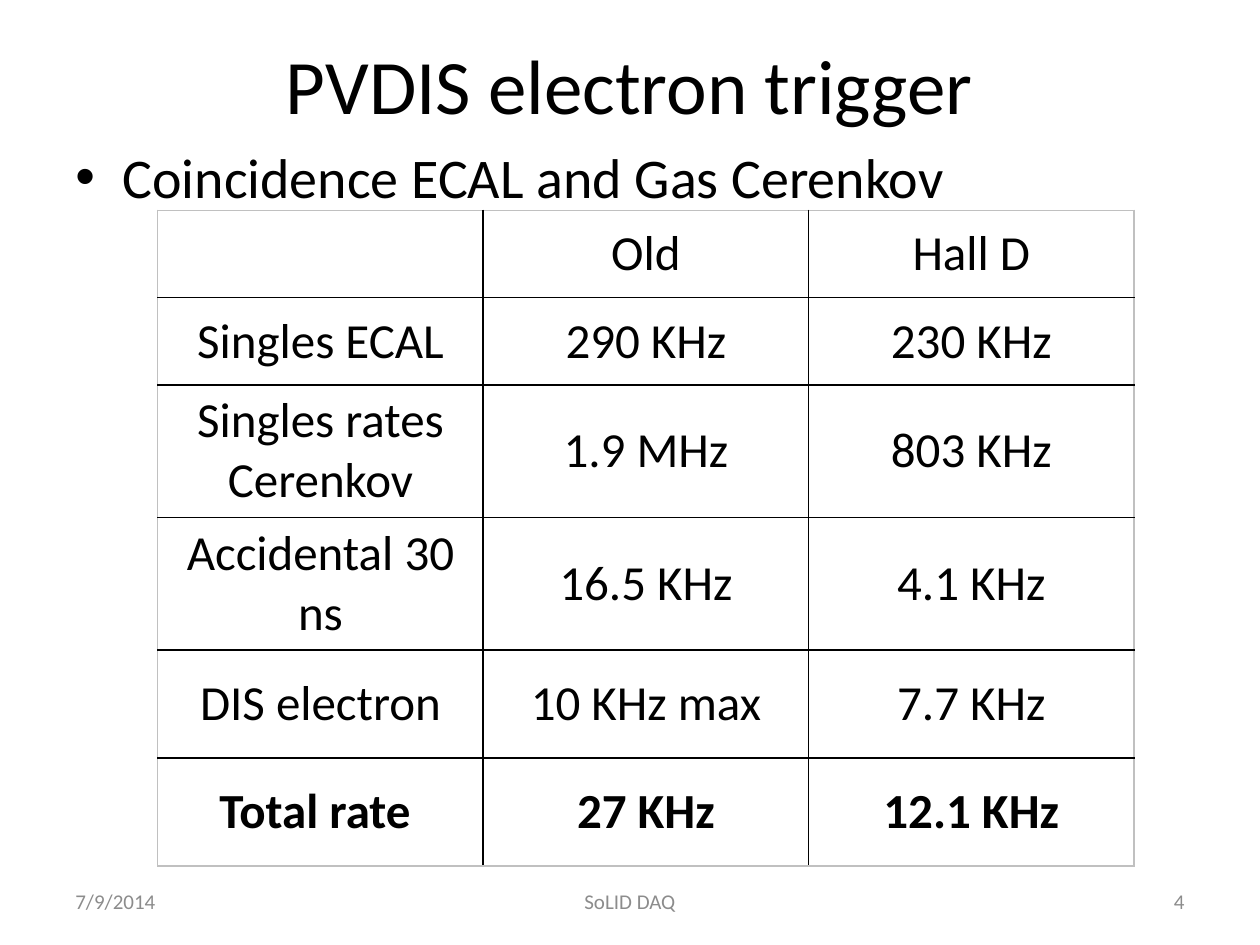
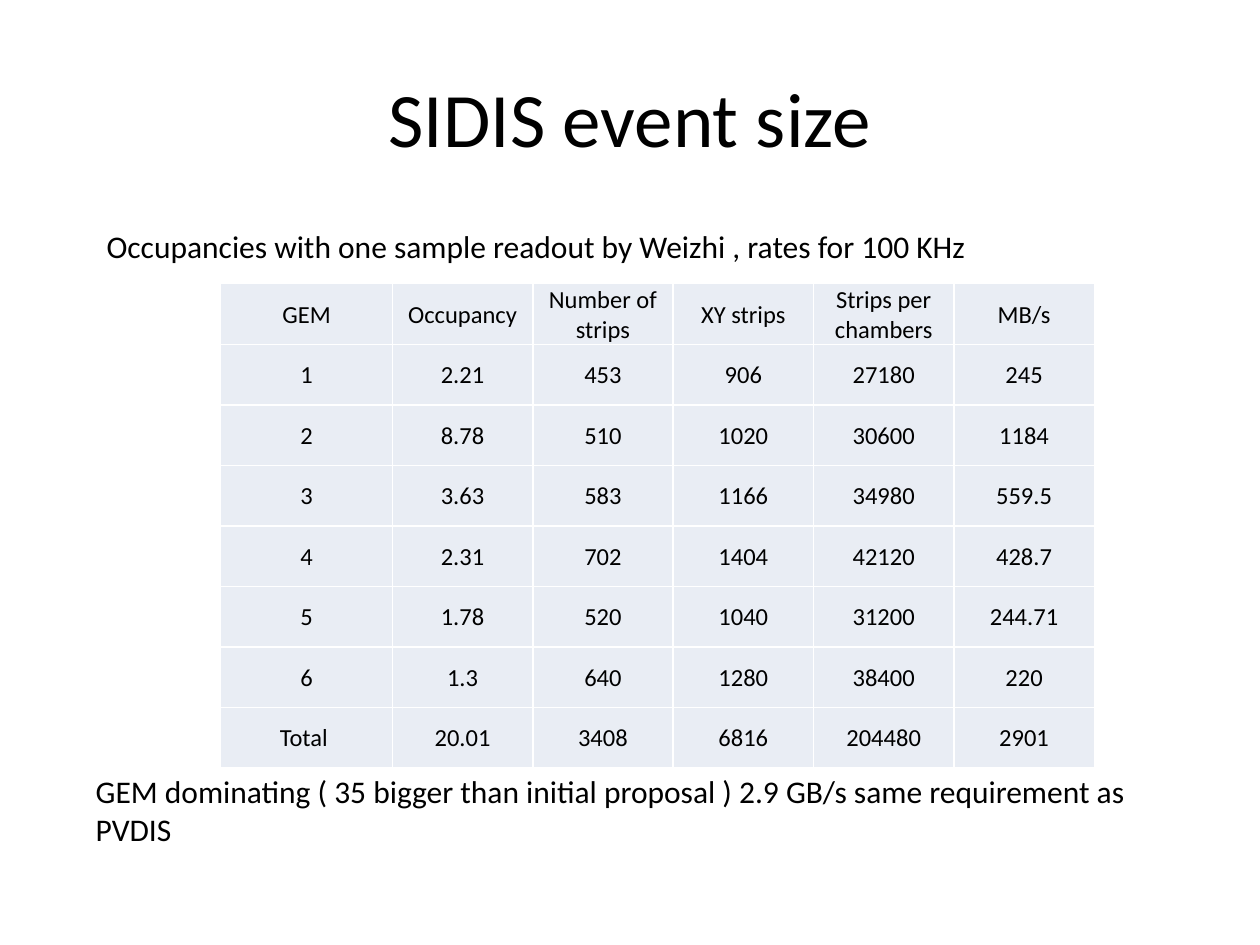
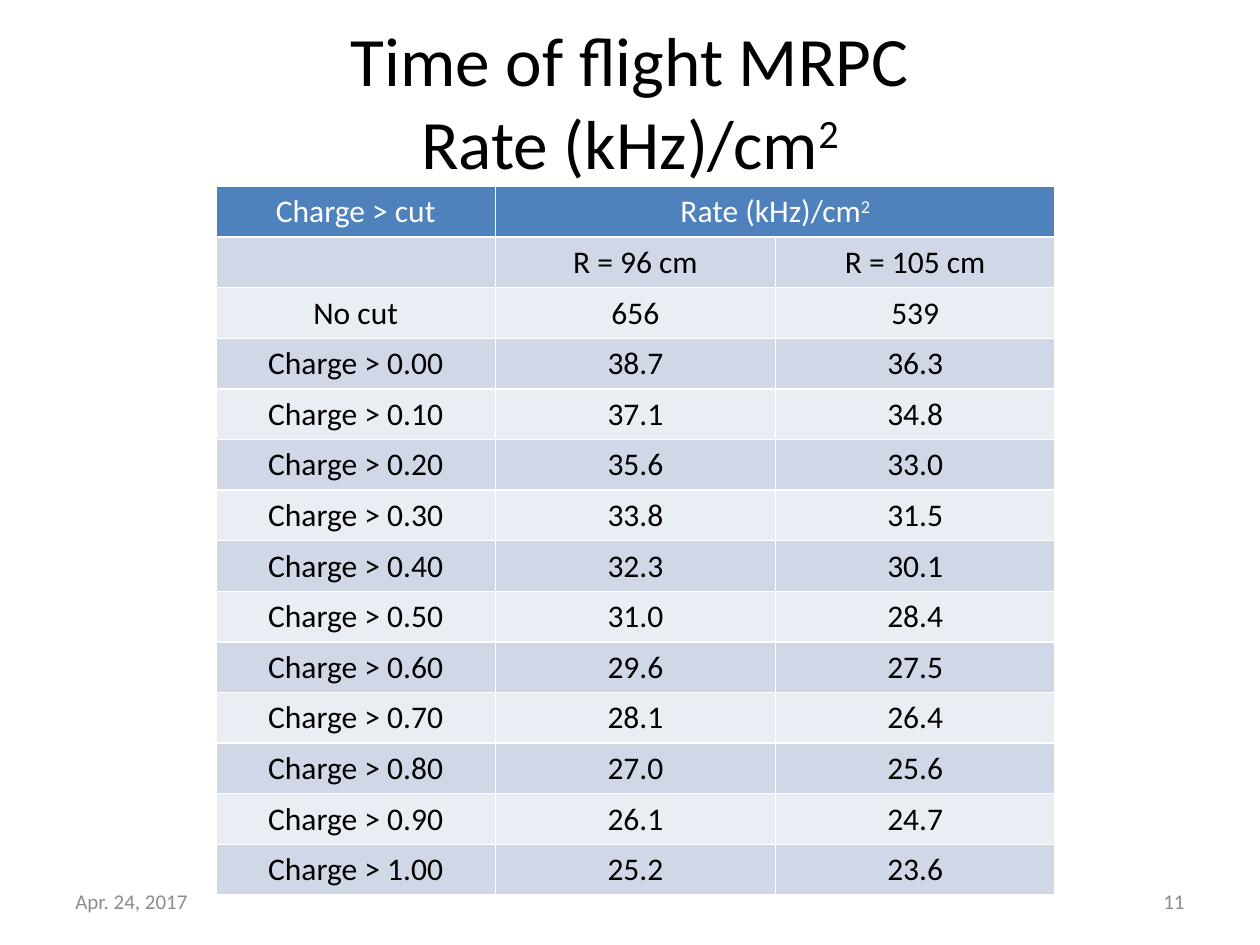
"""Build three slides of trigger rates, event sizes and time-of-flight rates."""
from lxml.etree import SubElement
from pptx import Presentation
from pptx.dml.color import RGBColor
from pptx.enum.text import MSO_ANCHOR as Anchor, MSO_AUTO_SIZE as AutoSize, PP_ALIGN as Align
from pptx.oxml import parse_xml
from pptx.oxml.ns import nsdecls, qn
from pptx.util import Cm, Pt

FONT = "Calibri"
COLORS = {"ink": "000000", "paper": "FFFFFF", "footer": "8C8C8C", "frame": "C0C0C0",
          "header": "4F81BD", "dark_band": "D0D8E8", "light_band": "E9EDF4"}
TITLE_BOX = {"left": 1.27, "width": 22.86, "height": 3.18}
FOOTER_TOP, FOOTER_HEIGHT = 17.65, 1.02
FOOTER_SLOTS = {"date": (1.27, 5.93, Align.LEFT), "name": (8.68, 8.04, Align.CENTER),
                "number": (18.2, 5.93, Align.RIGHT)}

TRIGGER_RATES = [
    ("", "Old", "Hall D"),
    ("Singles ECAL", "290 KHz", "230 KHz"),
    ("Singles rates Cerenkov", "1.9 MHz", "803 KHz"),
    ("Accidental 30 ns", "16.5 KHz", "4.1 KHz"),
    ("DIS electron", "10 KHz max", "7.7 KHz"),
    ("Total rate ", "27 KHz", "12.1 KHz"),
]
GEM_RATES = [
    ("GEM", "Occupancy", "Number of strips", "XY strips", "Strips per chambers", "MB/s"),
    ("1", "2.21", "453", "906", "27180", "245"),
    ("2", "8.78", "510", "1020", "30600", "1184"),
    ("3", "3.63", "583", "1166", "34980", "559.5"),
    ("4", "2.31", "702", "1404", "42120", "428.7"),
    ("5", "1.78", "520", "1040", "31200", "244.71"),
    ("6", "1.3", "640", "1280", "38400", "220"),
    ("Total ", "20.01", "3408", "6816", "204480", "2901"),
]
CUT_RATES = [("38.7", "36.3"), ("37.1", "34.8"), ("35.6", "33.0"), ("33.8", "31.5"),
             ("32.3", "30.1"), ("31.0", "28.4"), ("29.6", "27.5"), ("28.1", "26.4"),
             ("27.0", "25.6"), ("26.1", "24.7"), ("25.2", "23.6")]
MRPC_RATES = [
    ("Charge > cut", "Rate (kHz)/cm^2", ""),
    ("", "R = 96 cm", "R = 105 cm"),
    ("No cut", "656", "539"),
] + [(f"Charge > {step / 10:.2f}", *rates) for step, rates in enumerate(CUT_RATES)]

SLIDES = [
    {"title": ["PVDIS electron trigger"], "title_top": 0.1, "title_size": 44,
     "notes": [{"text": "Coincidence ECAL and Gas Cerenkov", "box": (1.27, 2.74, 22.86, 12.57),
                "size": 32, "bullet": True}],
     "footer": {"date": "7/9/2014", "name": "SoLID DAQ", "number": "4"},
     "table": {"rows": TRIGGER_RATES, "at": (3.18, 4.24), "size": 28,
               "widths": [6.56] * 3, "heights": [1.76] * 2 + [2.67] * 2 + [2.18] * 2,
               "fills": [None], "line": "ink", "frame": "frame", "bold_last": True}},
    {"title": ["SIDIS event size"], "title_top": 0.76, "title_size": 44,
     "notes": [{"text": "Occupancies with one sample readout by Weizhi , rates for 100 KHz",
                "box": (1.9, 4.45, 17.88, 1.02), "size": 18, "wrap": False},
               {"text": "GEM dominating ( 35 bigger than initial proposal ) 2.9 GB/s "
                        "same requirement as PVDIS",
                "box": (1.68, 15.44, 22.86, 1.8), "size": 18}],
     "footer": {},
     "table": {"rows": GEM_RATES, "at": (4.45, 5.72), "size": 14,
               "widths": [3.46] + [2.83] * 5, "heights": [1.22] * 8,
               "fills": ["light_band"], "line": "paper", "frame": "paper", "tight": True}},
    {"title": ["Time of flight MRPC", "Rate (kHz)/cm^2"], "title_top": 0.43, "title_size": 39.6,
     "notes": [],
     "footer": {"date": "Apr. 24, 2017", "number": "11"},
     "table": {"rows": MRPC_RATES, "at": (4.35, 3.76), "size": 18,
               "widths": [5.64] * 3, "heights": [1.02] * len(MRPC_RATES),
               "fills": ["dark_band", "light_band"], "line": "paper", "frame": "paper",
               "header": True, "anchor": Anchor.TOP}},
]


def rgb(name):
    return RGBColor.from_string(COLORS[name])


def write(paragraph, text, size, color="ink", align=Align.LEFT, bold=False):
    """Add text to a paragraph, raising whatever follows a caret."""
    paragraph.alignment = align
    base, _, raised = text.partition("^")
    for part in filter(None, (base, raised)):
        run = paragraph.add_run()
        run.text = part
        run.font.name, run.font.size, run.font.bold = FONT, Pt(size), bold
        run.font.color.rgb = rgb(color)
        if part is raised:
            run._r.get_or_add_rPr().set("baseline", "30000")


def add_title(slide, lines, top, size):
    title = slide.shapes.title
    title.left, title.top = Cm(TITLE_BOX["left"]), Cm(top)
    title.width, title.height = Cm(TITLE_BOX["width"]), Cm(TITLE_BOX["height"])
    frame = title.text_frame
    frame.auto_size, frame.vertical_anchor = AutoSize.NONE, Anchor.MIDDLE
    heading = frame.paragraphs[0]
    for index, line in enumerate(lines):
        if index:
            heading.add_line_break()
        write(heading, line, size, align=Align.CENTER)


def add_text(slide, text, box, size, color="ink", align=Align.LEFT, anchor=Anchor.TOP,
             wrap=True, bullet=False):
    frame = slide.shapes.add_textbox(*map(Cm, box)).text_frame
    frame.word_wrap, frame.vertical_anchor = wrap, anchor
    paragraph = frame.paragraphs[0]
    write(paragraph, text, size, color, align)
    if bullet:
        properties = paragraph._p.get_or_add_pPr()
        properties.set("marL", str(Cm(0.95)))
        properties.set("indent", str(Cm(-0.95)))
        SubElement(properties, qn("a:buFont")).set("typeface", "Arial")
        SubElement(properties, qn("a:buChar")).set("char", "•")


def add_footer(slide, texts):
    for slot, text in texts.items():
        left, width, align = FOOTER_SLOTS[slot]
        add_text(slide, text, (left, FOOTER_TOP, width, FOOTER_HEIGHT), 12, "footer",
                 align, Anchor.MIDDLE)


def set_borders(cell, sides):
    """Draw one-point borders; sides maps L, R, T and B to colour names."""
    properties = cell._tc.get_or_add_tcPr()
    for index, (side, color) in enumerate(sides.items()):
        properties.insert(index, parse_xml(
            f'<a:ln{side} {nsdecls("a")} w="{Pt(1)}"><a:solidFill>'
            f'<a:srgbClr val="{COLORS[color]}"/></a:solidFill></a:ln{side}>'))


def add_rates(slide, rows, at, size, widths, heights, fills, line, frame,
              header=False, bold_last=False, tight=False, anchor=Anchor.MIDDLE):
    last_row, last_column = len(rows) - 1, len(widths) - 1
    table = slide.shapes.add_table(len(rows), len(widths), *map(Cm, at),
                                   Cm(sum(widths)), Cm(sum(heights))).table
    table.first_row = table.horz_banding = False
    for column, width in zip(table.columns, widths):
        column.width = Cm(width)
    for r, values in enumerate(rows):
        table.rows[r].height = Cm(heights[r])
        is_header = header and r == 0
        fill = "header" if is_header else fills[(r - header) % len(fills)]
        for c, value in enumerate(values):
            cell = table.cell(r, c)
            cell.vertical_anchor = anchor
            if tight:
                cell.margin_left = cell.margin_top = cell.margin_right = Cm(0.03)
                cell.margin_bottom = 0
            if fill:
                cell.fill.solid()
                cell.fill.fore_color.rgb = rgb(fill)
            else:
                cell.fill.background()
            set_borders(cell, {"L": line if c else frame,
                               "R": line if c < last_column else frame,
                               "T": line if r else frame,
                               "B": line if r < last_row else frame})
            write(cell.text_frame.paragraphs[0], value, size, "paper" if is_header else "ink",
                  Align.CENTER, bold_last and r == last_row)
    if header:
        table.cell(0, 1).merge(table.cell(0, last_column))


def main():
    deck = Presentation()
    deck.slide_width, deck.slide_height = Cm(25.4), Cm(19.05)
    title_only = deck.slide_layouts[5]
    for content in SLIDES:
        slide = deck.slides.add_slide(title_only)
        add_title(slide, content["title"], content["title_top"], content["title_size"])
        for note in content["notes"]:
            add_text(slide, **note)
        add_footer(slide, content["footer"])
        add_rates(slide, **content["table"])
    deck.save("out.pptx")


if __name__ == "__main__":
    main()
